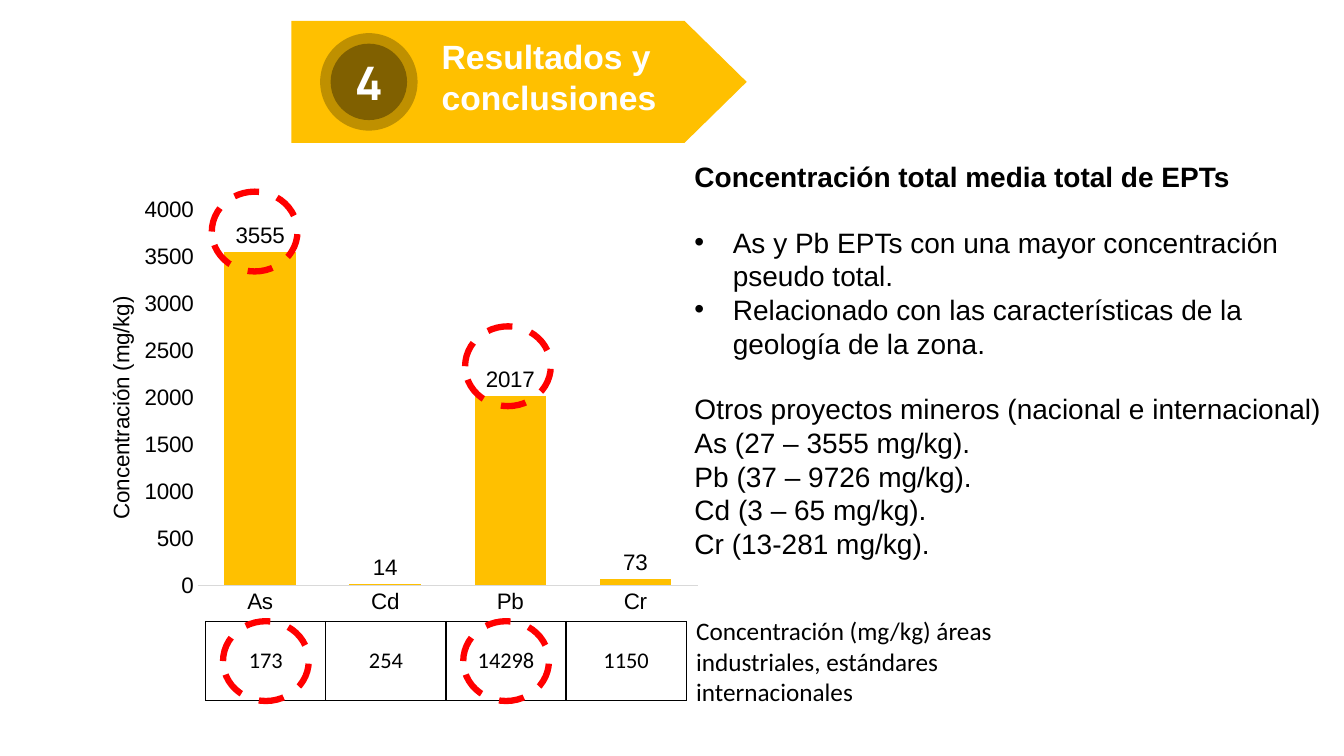
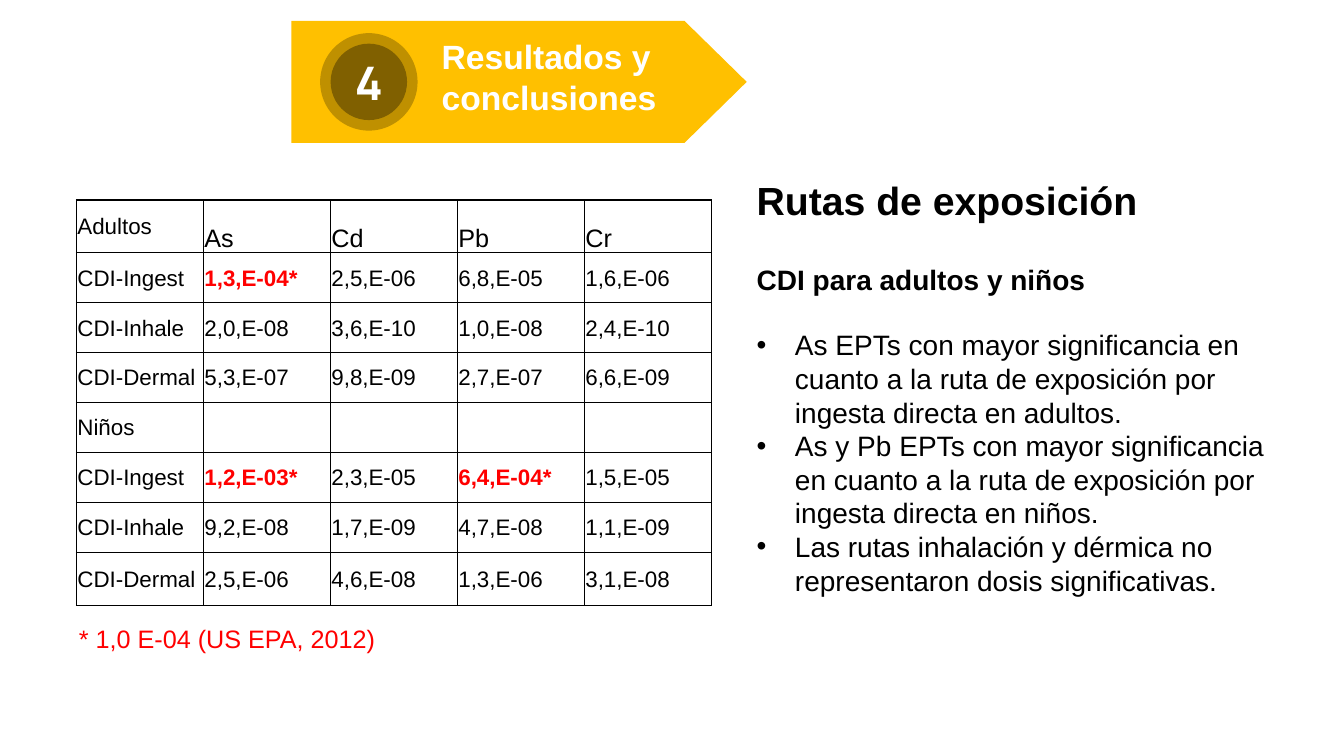
from dataclasses import dataclass

from lxml import etree
from pptx import Presentation
from pptx import util as u
from pptx.chart.data import CategoryChartData
from pptx.dml.color import RGBColor
from pptx.enum import chart as charts, dml, shapes, text
from pptx.oxml import ns

# Grid of 160 columns by 90 rows of square cells
COLUMNS, ROWS = 160, 90
CELL = u.Inches(7.5) / ROWS

COLORS = {
    "gold": "FFC000", "dark_gold": "BF9000", "brown": "806000",
    "white": "FFFFFF", "black": "000000", "red": "FF0000", "gray": "D9D9D9",
}
LINE_GAP = 23  # height of one 20 pt line
ANCHORS = {"top": text.MSO_ANCHOR.TOP, "middle": text.MSO_ANCHOR.MIDDLE,
           "bottom": text.MSO_ANCHOR.BOTTOM}
PLOT = (0.19, 0.05, 0.79, 0.865)  # shares of the chart box


@dataclass
class Box:
    left: float
    top: float
    width: float
    height: float

    def emu(self):
        return [round(n * CELL) for n in (self.left, self.top, self.width, self.height)]

    def inner(self, left, top, width, height):
        return Box(self.left + left, self.top + top, width, height)

    def around(self, share_x, share_y, width, height):
        """Box centred on a point given as shares of this one."""
        return self.inner(self.width * share_x - width / 2,
                          self.height * share_y - height / 2, width, height)


def color(name):
    return RGBColor.from_string(COLORS[name])


# Text
def write_text(frame, paragraphs, anchor="top", **common):
    """Paragraphs are strings or (string, overriding format) pairs."""
    frame.word_wrap = True
    frame.vertical_anchor = ANCHORS[anchor]
    for index, item in enumerate(paragraphs):
        content, own = (item, {}) if isinstance(item, str) else item
        style = {**common, **own}
        paragraph = frame.add_paragraph() if index else frame.paragraphs[0]
        paragraph.alignment = (text.PP_ALIGN.CENTER if style.get("center")
                               else text.PP_ALIGN.LEFT)
        if style.get("gap"):
            paragraph.space_before = u.Pt(style["gap"])
        if style.get("bullet"):
            add_bullet(paragraph)
        run = paragraph.add_run()
        run.text = content
        run.font.size = u.Pt(style.get("size", 20))
        run.font.name = style.get("font", "Arial")
        run.font.bold = style.get("bold", False)
        run.font.color.rgb = color(style.get("fill", "black"))


def add_bullet(paragraph):
    properties = paragraph._p.get_or_add_pPr()
    properties.set("marL", str(u.Inches(0.38)))
    properties.set("indent", str(-u.Inches(0.38)))
    etree.SubElement(properties, ns.qn("a:buFont"), typeface="Arial")
    etree.SubElement(properties, ns.qn("a:buChar"), char="•")


def add_text(slide, box, paragraphs, **style):
    shape = slide.shapes.add_textbox(*box.emu())
    write_text(shape.text_frame, paragraphs, **style)


# Shapes
def add_shape(slide, kind, box, fill=None):
    shape = slide.shapes.add_shape(kind, *box.emu())
    shape.shadow.inherit = False
    shape.line.fill.background()
    if fill:
        shape.fill.solid()
        shape.fill.fore_color.rgb = color(fill)
    else:
        shape.fill.background()
    return shape


def add_ring(slide, box, share_x, share_y):
    ring = add_shape(slide, shapes.MSO_SHAPE.OVAL,
                     box.around(share_x, share_y, 10.2, 9.5))
    ring.line.color.rgb = color("red")
    ring.line.width = u.Pt(4.5)
    ring.line.dash_style = dml.MSO_LINE.DASH


def add_banner(slide, box, number, lines):
    arrow = add_shape(slide, shapes.MSO_SHAPE.PENTAGON, box, "gold")
    arrow.adjustments[0] = 0.51
    for diameter, fill in ((11.6, "dark_gold"), (9.1, "brown")):
        badge = add_shape(slide, shapes.MSO_SHAPE.OVAL,
                          box.around(0.17, 0.5, diameter, diameter), fill)
    frame = badge.text_frame
    frame.margin_left = frame.margin_right = frame.margin_top = frame.margin_bottom = 0
    write_text(frame, [number], anchor="middle", center=True, size=33,
               font="Manrope", bold=True, fill="white")
    add_text(slide, box.inner(16.7, 1.1, 30, 10.9), lines, anchor="bottom",
             size=24, bold=True, fill="white")


# Tables
def set_borders(cell):
    properties = cell._tc.get_or_add_tcPr()
    for index, side in enumerate(("a:lnL", "a:lnR", "a:lnT", "a:lnB")):
        line = etree.Element(ns.qn(side), w=str(u.Pt(1)))
        fill = etree.SubElement(line, ns.qn("a:solidFill"))
        etree.SubElement(fill, ns.qn("a:srgbClr"), val=COLORS["black"])
        properties.insert(index, line)


def add_table(slide, box, rows, heights, margins, cell_style):
    """cell_style(row, column, value) gives the text format of a cell."""
    table = slide.shapes.add_table(len(rows), len(rows[0]), *box.emu()).table
    table.first_row = table.horz_banding = False
    for column in table.columns:
        column.width = round(box.width * CELL / len(rows[0]))
    for r, (values, height) in enumerate(zip(rows, heights)):
        table.rows[r].height = round(height * CELL)
        for c, value in enumerate(values):
            cell = table.cell(r, c)
            cell.fill.background()
            set_borders(cell)
            cell.margin_left = cell.margin_right = u.Inches(margins[0])
            cell.margin_top, cell.margin_bottom = u.Inches(margins[1]), 0
            if value:
                style = cell_style(r, c, value)
                write_text(cell.text_frame, [value], **style)
                cell.vertical_anchor = ANCHORS[style["anchor"]]


# Chart
def set_layout(parent, index, **values):
    layout = parent.find(ns.qn("c:layout"))
    if layout is None:
        layout = etree.Element(ns.qn("c:layout"))
        parent.insert(index, layout)
    manual = etree.SubElement(layout, ns.qn("c:manualLayout"))
    for name, value in values.items():
        etree.SubElement(manual, ns.qn("c:" + name), val=str(value))


def add_concentration_chart(slide, box):
    data = CategoryChartData(number_format="0")
    data.categories = ["As", "Cd", "Pb", "Cr"]
    data.add_series("Series 1", (3555, 14, 2017, 73))
    chart = slide.shapes.add_chart(charts.XL_CHART_TYPE.COLUMN_CLUSTERED,
                                   *box.emu(), data).chart
    chart.has_legend = chart.has_title = False
    chart.font.size, chart.font.name = u.Pt(16), "Arial"
    chart.font.color.rgb = color("black")

    plot = chart.plots[0]
    plot.gap_width = 75
    plot.vary_by_categories = False
    bars = plot.series[0]
    bars.format.fill.solid()
    bars.format.fill.fore_color.rgb = color("gold")
    labels = bars.data_labels
    labels.show_value = True
    labels.number_format, labels.number_format_is_linked = "0", False
    labels.position = charts.XL_LABEL_POSITION.OUTSIDE_END
    labels.font.size, labels.font.name = u.Pt(16), "Arial"
    labels.font.color.rgb = color("black")

    categories, values = chart.category_axis, chart.value_axis
    for axis in (categories, values):
        axis.major_tick_mark = axis.minor_tick_mark = charts.XL_TICK_MARK.NONE
        axis.has_major_gridlines = False
    categories.format.line.color.rgb = color("gray")
    categories.format.line.width = u.Pt(0.75)
    values.format.line.fill.background()
    values.minimum_scale, values.maximum_scale, values.major_unit = 0, 4000, 500
    values.tick_labels.number_format = "0"
    values.tick_labels.number_format_is_linked = False

    title = values.axis_title
    write_text(title.text_frame, ["Concentración (mg/kg)"], center=True, size=16)
    body = title.text_frame._txBody.find(ns.qn("a:bodyPr"))
    body.set("rot", "-5400000")
    body.set("vert", "horz")
    set_layout(title._element, 1, xMode="edge", yMode="edge", x=0.04, y=0.24)
    left, top, width, height = PLOT
    set_layout(chart._chartSpace.chart.plotArea, 0, layoutTarget="inner",
               xMode="edge", yMode="edge", x=left, y=top, w=width, h=height)


# Slides
def new_slide(presentation):
    slide = presentation.slides.add_slide(presentation.slide_layouts[6])
    add_banner(slide, Box(34.7, 2.5, 54.2, 14.5), "4",
               ["Resultados y", "conclusiones"])
    return slide


def build_concentration_slide(presentation):
    slide = new_slide(presentation)
    add_text(slide, Box(81.5, 18.4, 78.3, 49.7), [
        ("Concentración total media total de EPTs", {"bold": True}),
        ("As y Pb EPTs con una mayor concentración pseudo total.",
         {"bullet": True, "gap": LINE_GAP}),
        ("Relacionado con las características de la geología de la zona.",
         {"bullet": True}),
        ("Otros proyectos mineros (nacional e internacional)", {"gap": LINE_GAP}),
        "As (27 – 3555 mg/kg).",
        "Pb (37 – 9726 mg/kg).",
        "Cd (3 – 65 mg/kg).",
        "Cr (13-281 mg/kg).",
    ])
    chart_box = Box(9.2, 22.4, 75.4, 51.7)
    add_concentration_chart(slide, chart_box)

    # International limits, aligned under the bars
    limits = ["173", "254", "14298", "1150"]
    limits_box = Box(24.5, 74, 57.2, 9.4)
    add_table(slide, limits_box, [limits], [limits_box.height], (0.05, 0),
              lambda r, c, value: {"anchor": "middle", "center": True,
                                   "size": 16, "font": "Calibri"})
    add_text(slide, Box(81.7, 72.7, 44.8, 12.1),
             ["Concentración (mg/kg) áreas industriales, estándares internacionales"],
             size=18, font="Calibri")

    # Rings on As and Pb
    for column, share_x, share_y in ((0, 0.28, 0.1), (2, 0.68, 0.41)):
        add_ring(slide, chart_box, share_x, share_y)
        add_ring(slide, limits_box, (column + 0.5) / len(limits), 0.5)


def exposure_style(row, column, value):
    if row == 0 and column:
        return {"anchor": "bottom", "size": 18}
    flagged = value.endswith("*")
    return {"anchor": "middle", "size": 16, "bold": flagged,
            "fill": "red" if flagged else "black"}


def build_exposure_slide(presentation):
    slide = new_slide(presentation)
    add_text(slide, Box(88.9, 20.4, 60, 6.8), ["Rutas de exposición"],
             size=28, bold=True)
    add_text(slide, Box(88.9, 30.6, 63.2, 41.6), [
        ("CDI para adultos y niños", {"bold": True, "bullet": False}),
        ("As EPTs con mayor significancia en cuanto a la ruta de exposición "
         "por ingesta directa en adultos.", {"gap": LINE_GAP}),
        "As y Pb EPTs con mayor significancia en cuanto a la ruta de exposición "
        "por ingesta directa en niños.",
        "Las rutas inhalación y dérmica no representaron dosis significativas.",
    ], bullet=True)
    rows = [
        ["Adultos", "As", "Cd", "Pb", "Cr"],
        ["CDI-Ingest", "1,3,E-04*", "2,5,E-06", "6,8,E-05", "1,6,E-06"],
        ["CDI-Inhale", "2,0,E-08", "3,6,E-10", "1,0,E-08", "2,4,E-10"],
        ["CDI-Dermal", "5,3,E-07", "9,8,E-09", "2,7,E-07", "6,6,E-09"],
        ["Niños", "", "", "", ""],
        ["CDI-Ingest", "1,2,E-03*", "2,3,E-05", "6,4,E-04*", "1,5,E-05"],
        ["CDI-Inhale", "9,2,E-08", "1,7,E-09", "4,7,E-08", "1,1,E-09"],
        ["CDI-Dermal", "2,5,E-06", "4,6,E-08", "1,3,E-06", "3,1,E-08"],
    ]
    heights = [6.3] + [5.95] * 6 + [6.3]
    add_table(slide, Box(9.1, 23.8, 75.6, sum(heights)), rows, heights,
              (0.01, 0.01), exposure_style)
    add_text(slide, Box(8.2, 73.6, 45, 4.8), ["* 1,0 E-04 (US EPA, 2012)"],
             size=18, fill="red")


def main():
    presentation = Presentation()
    presentation.slide_width = round(COLUMNS * CELL)
    presentation.slide_height = round(ROWS * CELL)
    build_concentration_slide(presentation)
    build_exposure_slide(presentation)
    presentation.save("out.pptx")


if __name__ == "__main__":
    main()
